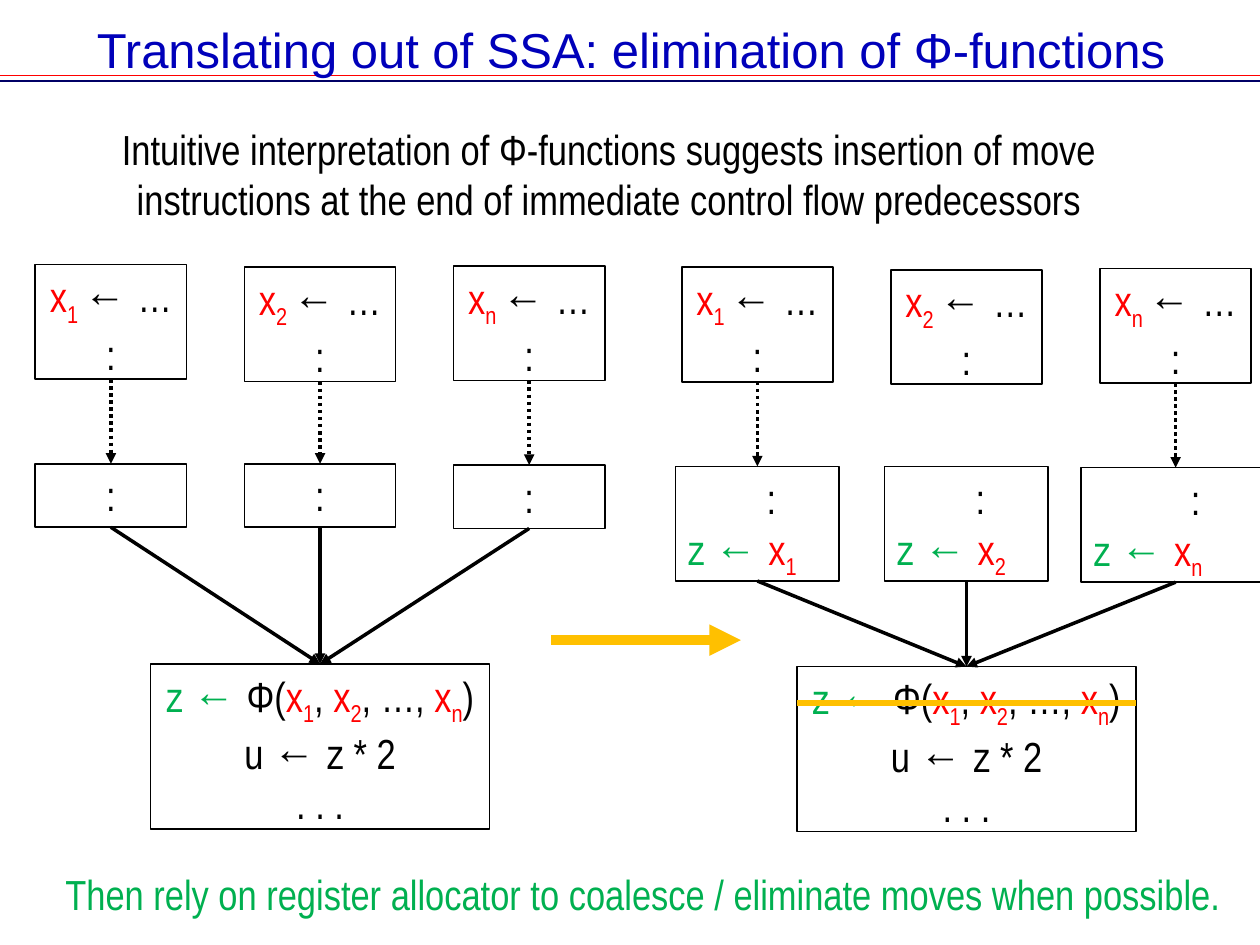
from pptx import Presentation
from pptx.dml.color import RGBColor
from pptx.enum import dml, shapes, text
from pptx.oxml import ns
from pptx.util import Pt
from lxml import etree

BLACK = RGBColor(0, 0, 0)
RED = RGBColor(0xFF, 0, 0)
GREEN = RGBColor(0, 0xB0, 0x50)
GOLD = RGBColor(0xFF, 0xC0, 0)
BLUE = RGBColor(0, 0, 0xBA)
NAVY = RGBColor(0, 0, 0x66)
LEFT, MID = text.PP_ALIGN.LEFT, text.PP_ALIGN.CENTER

TITLE = "Translating out of SSA: elimination of Φ-functions"
INTRO = ("Intuitive interpretation of Φ-functions suggests insertion of move "
         "instructions at the end of immediate control flow predecessors")
CLOSE = "Then rely on register allocator to coalesce / eliminate moves when possible."
NAMES = ["1", "2", "n"]

# A paragraph is a list of runs: (text, colour) or (text, colour, "sub")
COLON = [(":", BLACK)]
PHI = [("z ← ", GREEN), ("Φ(", BLACK),
       ("x", RED), ("1", RED, "sub"), (", ", BLACK),
       ("x", RED), ("2", RED, "sub"), (", …, ", BLACK),
       ("x", RED), ("n", RED, "sub"), (")", BLACK)]
MERGE = [PHI, [("u ← z * 2", BLACK)], [(". . .", BLACK)]]

# Each graph: centre of the first column, vertical shift, moves inserted or not
GRAPHS = [
    dict(x=63.4, dy=0, moves=False, dots=[True, True, True]),
    dict(x=432.8, dy=1.5, moves=True, dots=[True, False, True]),
]
STEP = 119.5
DEF_TOPS, DEF_W, DEF_H = [151.2, 152.6, 151.9], 86.4, 65.5
END_TOPS, END_H = [265, 265, 265.7], 36.3
MOVE_W, MOVE_PAD = [93.6, 93.6, 108], [16, 16, 23]
MERGE_TOP, MERGE_W, MERGE_H = 379.4, 193.7, 94.3
STRIKE_Y = 401.8

prs = Presentation()
prs.slide_width, prs.slide_height = Pt(720), Pt(540)
slide = prs.slides.add_slide(prs.slide_layouts[5])


def place(shape, *spot):
    for name, val in zip(("left", "top", "width", "height"), spot):
        setattr(shape, name, Pt(val))


def write(frame, paras, size=24, face="Arial Narrow", align=MID, wrap=True,
          anchor=text.MSO_ANCHOR.TOP):
    form = dict(word_wrap=wrap, vertical_anchor=anchor,
                auto_size=text.MSO_AUTO_SIZE.NONE)
    for name, val in form.items():
        setattr(frame, name, val)
    for i, runs in enumerate(paras):
        para = frame.paragraphs[0] if i == 0 else frame.add_paragraph()
        para.alignment = align
        for words, color, *sub in runs:
            run = para.add_run()
            run.text = words
            for name, val in dict(size=Pt(size), name=face, bold=False).items():
                setattr(run.font, name, val)
            run.font.color.rgb = color
            if sub:
                run._r.get_or_add_rPr().set("baseline", "-25000")


def label(words, color, *spot):
    box = slide.shapes.add_textbox(*map(Pt, spot))
    write(box.text_frame, [[(words, color)]])


def block(mid, top, width, height, paras, wrap=False):
    """Outlined box centred on mid."""
    box = slide.shapes.add_shape(shapes.MSO_SHAPE.RECTANGLE, Pt(mid - width / 2),
                                 Pt(top), Pt(width), Pt(height))
    box.shadow.inherit = False
    box.fill.background()
    box.line.color.rgb = BLACK
    box.line.width = Pt(1)
    write(box.text_frame, paras, wrap=wrap)
    return box.text_frame.paragraphs


def line(x1, y1, x2, y2, color=BLACK, width=2, dots=False, arrow=True):
    link = slide.shapes.add_connector(shapes.MSO_CONNECTOR.STRAIGHT,
                                      *map(Pt, (x1, y1, x2, y2)))
    link.line.color.rgb = color
    link.line.width = Pt(width)
    if dots:
        link.line.dash_style = dml.MSO_LINE.ROUND_DOT
    if arrow:
        etree.SubElement(link.line._get_or_add_ln(), ns.qn("a:tailEnd"),
                         type="triangle")
    etree.SubElement(link._element.spPr, ns.qn("a:effectLst"))
    return link


def graph(x, dy, moves, dots):
    hub, goal = x + STEP, MERGE_TOP + dy
    block(hub, goal, MERGE_W, MERGE_H, MERGE)
    for i, name in enumerate(NAMES):
        mid, top, end = x + i * STEP, DEF_TOPS[i] + dy, END_TOPS[i] + dy
        start = [("x", RED), (name + " ", RED, "sub"), ("← …", BLACK)]
        block(mid, top, DEF_W, DEF_H, [start, COLON])
        if moves:
            high = DEF_H
            move = [("z ← ", GREEN), ("x", RED), (name, RED, "sub")]
            paras = block(mid, end, MOVE_W[i], high, [COLON, move], wrap=True)
            paras[0]._p.get_or_add_pPr().set("marL", str(Pt(MOVE_PAD[i])))
            paras[1].alignment = LEFT
        else:
            high = END_H
            block(mid, end, DEF_W, high, [COLON])
        if dots[i]:
            line(mid, top + DEF_H, mid, end, dots=True)
        line(mid, end + high, hub, goal)


title = slide.shapes.title
place(title, 48.2, 7.2, 641.5, 41)
write(title.text_frame, [[(TITLE, BLUE)]], 28, "Arial", LEFT,
      anchor=text.MSO_ANCHOR.MIDDLE)
for y, color in ((43.2, RED), (46.1, NAVY)):
    rule = line(0, y, 720, y, color, 1, arrow=False)
    title._element.addprevious(rule._element)

label(INTRO, BLACK, 49.7, 67, 596.2, 65.5)
for item in GRAPHS:
    graph(**item)
hub = GRAPHS[1]["x"] + STEP
line(hub - MERGE_W / 2, STRIKE_Y, hub + MERGE_W / 2, STRIKE_Y, GOLD, 3, arrow=False)
label(CLOSE, GREEN, 20.2, 492.5, 694, 36)
line(315, 365.8, 423.4, 365.8, GOLD, 6)

prs.save("out.pptx")
